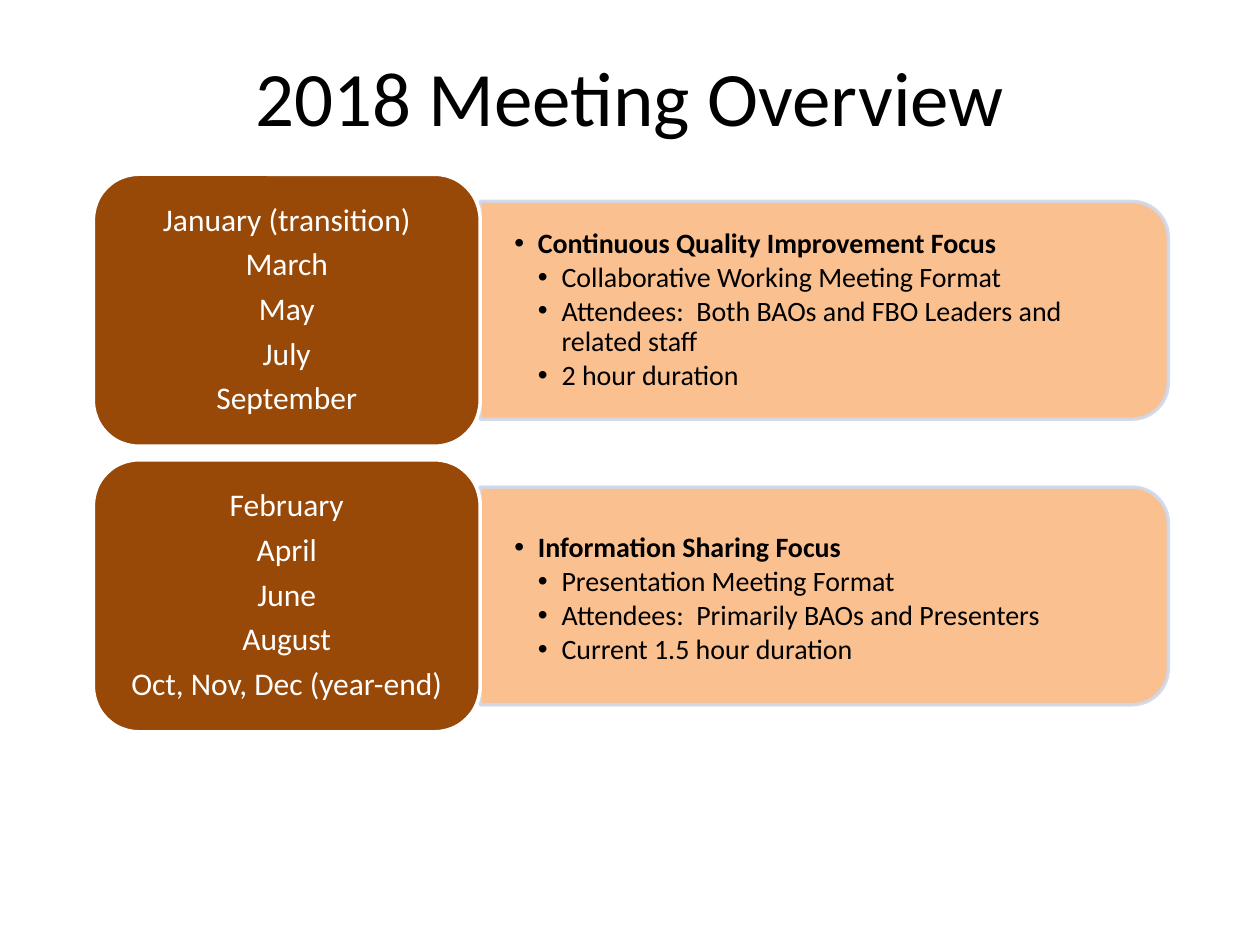
import pptx
import pptx.util
import pptx.dml.color
import pptx.enum.shapes
import pptx.enum.text
import pptx.oxml
import pptx.oxml.ns
from dataclasses import dataclass

Pt = pptx.util.Pt
ANCHOR = pptx.enum.text.MSO_ANCHOR
ALIGN = pptx.enum.text.PP_ALIGN
SHAPE = pptx.enum.shapes.MSO_SHAPE

TITLE = "2018 Meeting Overview"
MEETINGS = [
    {
        "months": ["January (transition)", "March", "May", "July", "September"],
        "focus": "Continuous Quality Improvement Focus",
        "details": [
            "Collaborative Working Meeting Format",
            "Attendees:  Both BAOs and FBO Leaders and related staff",
            "2 hour duration",
        ],
        "text_shift": 0,
    },
    {
        "months": ["February", "April", "June", "August", "Oct, Nov, Dec (year-end)"],
        "focus": "Information Sharing Focus",
        "details": [
            "Presentation Meeting Format",
            "Attendees:  Primarily BAOs and Presenters",
            "Current 1.5 hour duration",
        ],
        "text_shift": 2,
    },
]


@dataclass(frozen=True)
class Theme:
    font: str = "Calibri"
    title_size: int = 44
    month_size: int = 18
    detail_size: int = 16
    dark: str = "984807"
    light: str = "FAC090"
    edge: str = "D0D8E8"
    white: str = "FFFFFF"
    black: str = "000000"


THEME = Theme()
SLIDE_WIDTH, SLIDE_HEIGHT = 720, 540
LEFT, TOP = 53.4, 99.6
MONTHS_WIDTH, MONTHS_HEIGHT = 221, 155.4
PANEL_WIDTH, PANEL_HEIGHT = 393.2, 124.4
ROW_STEP = 163.2
TEXT_WIDTH, TEXT_HEIGHT = 386.6, 112.3
BULLET_INDENT = 13.5


def rgb(color):
    return pptx.dml.color.RGBColor.from_string(color)


def place(shape, left, top, width, height):
    shape.left, shape.top = Pt(left), Pt(top)
    shape.width, shape.height = Pt(width), Pt(height)


def prepare_frame(shape, anchor, horizontal, vertical):
    frame = shape.text_frame
    frame.word_wrap = True
    frame.auto_size = pptx.enum.text.MSO_AUTO_SIZE.NONE
    frame.vertical_anchor = anchor
    frame.margin_left = frame.margin_right = Pt(horizontal)
    frame.margin_top = frame.margin_bottom = Pt(vertical)
    return frame


def set_font(paragraph, size, color, bold=False):
    font = paragraph.font
    font.name, font.size, font.bold = THEME.font, Pt(size), bold
    font.color.rgb = rgb(color)


def add_bullet(paragraph, level):
    properties = paragraph._p.get_or_add_pPr()
    properties.set("marL", str(Pt(BULLET_INDENT * (level + 1))))
    properties.set("indent", str(Pt(-BULLET_INDENT)))
    bullet = pptx.oxml.parse_xml(
        f'<a:buChar {pptx.oxml.ns.nsdecls("a")} char="•"/>')
    properties.append(bullet)


def write_lines(frame, lines, space_after):
    """Fill the frame with one evenly spaced paragraph per line."""
    frame.text = "\n".join(lines)
    for paragraph in frame.paragraphs:
        paragraph.line_spacing = 0.9
        paragraph.space_before = Pt(0)
        paragraph.space_after = Pt(space_after)
    return frame.paragraphs


def add_block(slide, kind, box, fill, line):
    shape = slide.shapes.add_shape(kind, *map(Pt, box))
    shape.shadow.inherit = False
    shape.fill.solid()
    shape.fill.fore_color.rgb = rgb(fill)
    shape.line.color.rgb = rgb(line)
    shape.line.width = Pt(2)
    return shape


def add_panel(slide, left, center):
    """Draw a panel rounded on its right side, as a shape turned by 90 degrees."""
    box = (left + (PANEL_WIDTH - PANEL_HEIGHT) / 2, center - PANEL_WIDTH / 2,
           PANEL_HEIGHT, PANEL_WIDTH)
    panel = add_block(slide, SHAPE.ROUND_2_SAME_RECTANGLE, box, THEME.light, THEME.edge)
    panel.rotation = 90
    for color in panel.line._ln.iter(pptx.oxml.ns.qn("a:srgbClr")):
        color.append(pptx.oxml.parse_xml(
            f'<a:alpha {pptx.oxml.ns.nsdecls("a")} val="90000"/>'))
    return panel


def add_meeting(slide, meeting, body, top):
    center = top + MONTHS_HEIGHT / 2
    panel_left = LEFT + MONTHS_WIDTH
    panel = add_panel(slide, panel_left, center)

    panel.element.addnext(body.element)
    place(body, panel_left, center - TEXT_HEIGHT / 2 + meeting["text_shift"],
          TEXT_WIDTH, TEXT_HEIGHT)
    frame = prepare_frame(body, ANCHOR.MIDDLE, 19.5, 9.75)
    lines = [meeting["focus"], *meeting["details"]]
    for index, paragraph in enumerate(write_lines(frame, lines, 2.1)):
        paragraph.level = min(index, 1)
        paragraph.alignment = ALIGN.LEFT
        add_bullet(paragraph, paragraph.level)
        set_font(paragraph, THEME.detail_size, THEME.black, bold=index == 0)

    months = add_block(slide, SHAPE.ROUNDED_RECTANGLE,
                       (LEFT, top, MONTHS_WIDTH, MONTHS_HEIGHT), THEME.dark, THEME.white)
    frame = prepare_frame(months, ANCHOR.MIDDLE, 5.25, 2.6)
    for paragraph in write_lines(frame, meeting["months"], 6):
        paragraph.alignment = ALIGN.CENTER
        set_font(paragraph, THEME.month_size, THEME.white)


def main():
    presentation = pptx.Presentation()
    presentation.slide_width, presentation.slide_height = Pt(SLIDE_WIDTH), Pt(SLIDE_HEIGHT)
    two_content = presentation.slide_layouts[3]
    slide = presentation.slides.add_slide(two_content)

    title = slide.shapes.title
    place(title, 36, 21.6, 648, 90)
    frame = prepare_frame(title, ANCHOR.TOP, 7.2, 6.4)
    frame.text = TITLE
    frame.paragraphs[0].alignment = ALIGN.CENTER
    set_font(frame.paragraphs[0], THEME.title_size, THEME.black)

    bodies = [slide.placeholders[1], slide.placeholders[2]]
    for row, (meeting, body) in enumerate(zip(MEETINGS, bodies)):
        add_meeting(slide, meeting, body, TOP + row * ROW_STEP)

    presentation.save("out.pptx")


if __name__ == "__main__":
    main()
